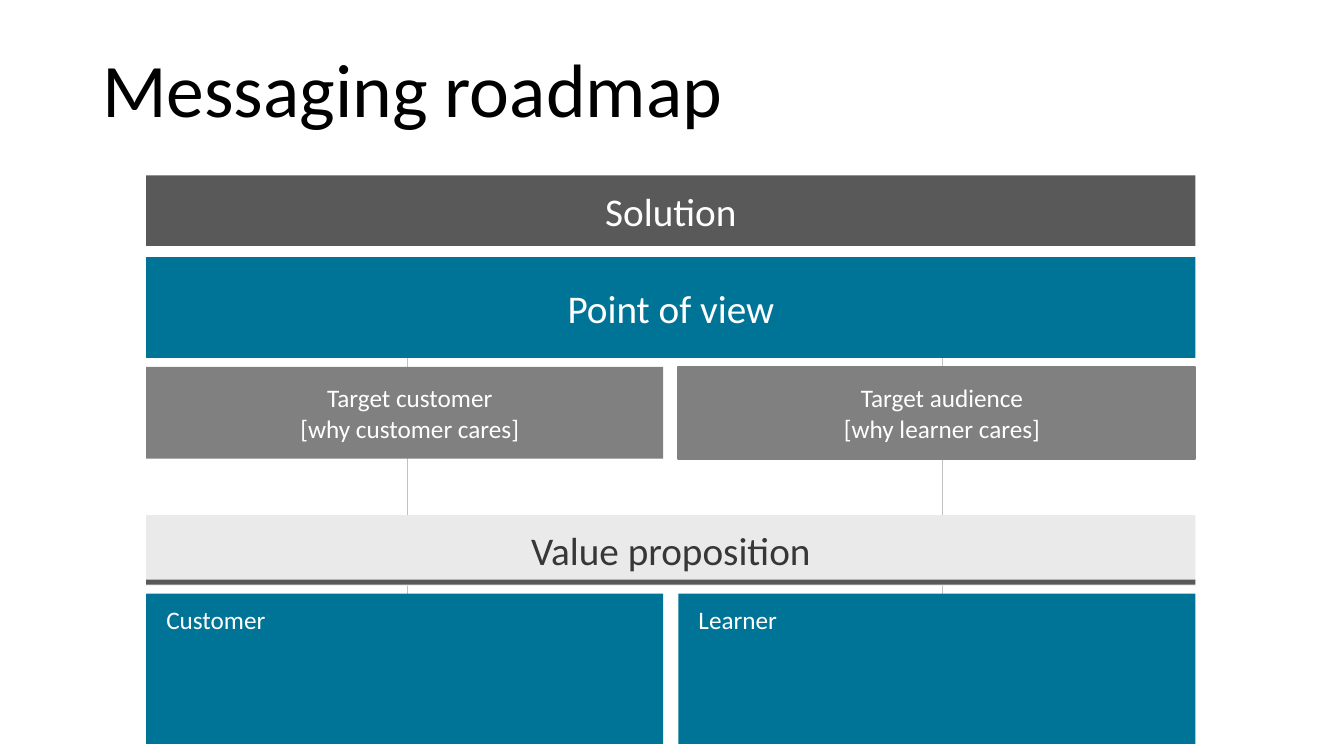
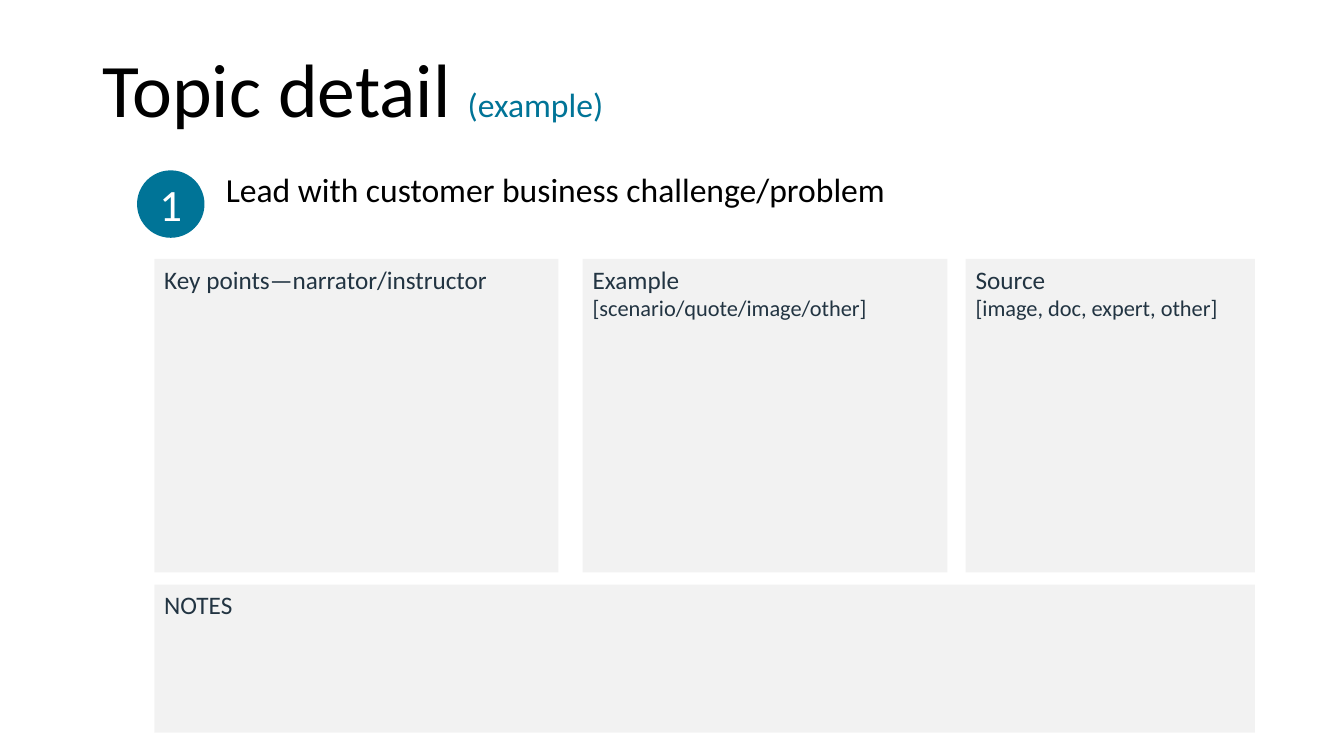
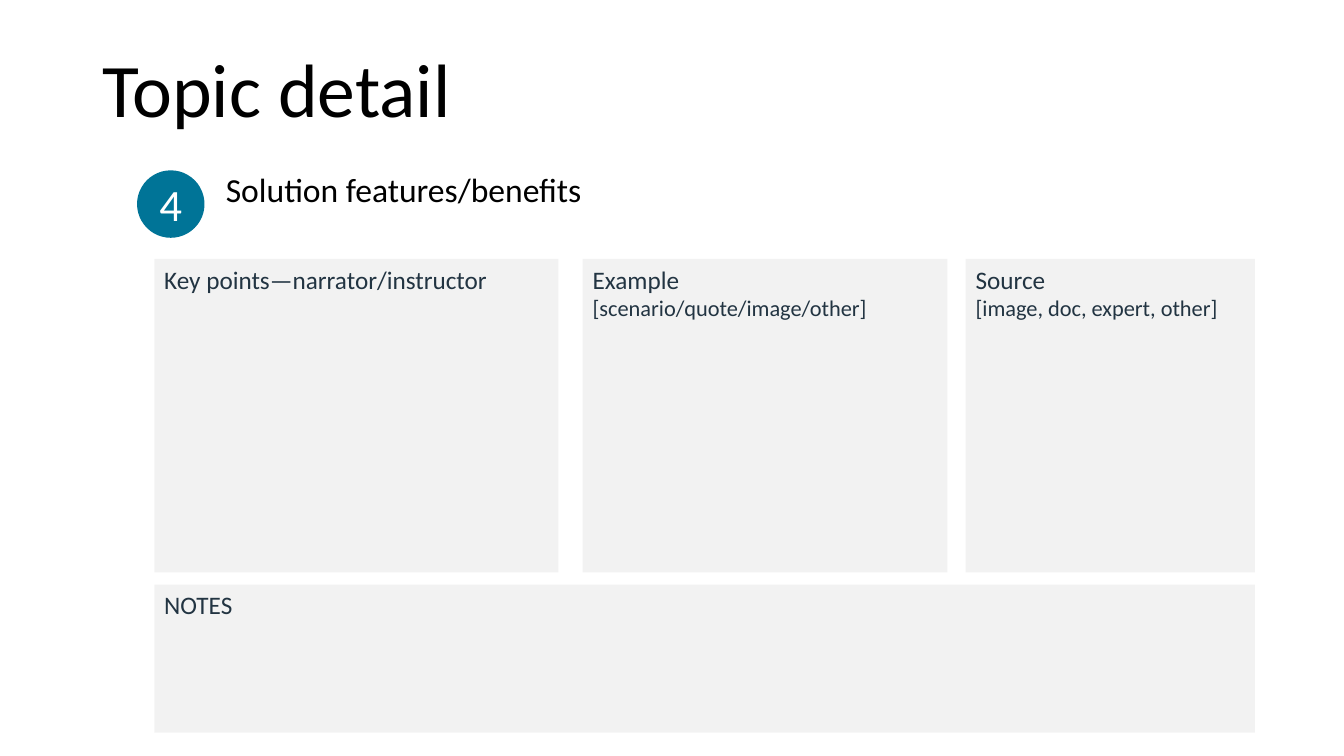
from lxml import etree
from pptx import Presentation
from pptx.dml.color import RGBColor
from pptx.enum import shapes, text
from pptx.oxml import ns
from pptx.util import Pt

FONT = "Calibri"
COLORS = {
    "black": "000000", "white": "FFFFFF", "teal": "007497", "charcoal": "595959",
    "gray": "808080", "pale": "EAEAEA", "rule": "C1C1C1", "ink": "373738",
    "navy": "223442",
}
RECT, OVAL = shapes.MSO_SHAPE.RECTANGLE, shapes.MSO_SHAPE.OVAL
CENTER, LEFT = text.PP_ALIGN.CENTER, text.PP_ALIGN.LEFT
MIDDLE, TOP = text.MSO_ANCHOR.MIDDLE, text.MSO_ANCHOR.TOP

# Roadmap grid: full-width bands and two equal columns
ROAD_X, ROAD_W, ROAD_GAP = 104.4, 749.5, 10.8
HALF_W = (ROAD_W - ROAD_GAP) / 2
RIGHT_X = ROAD_X + HALF_W + ROAD_GAP
ROAD_INSETS = (14.4, 7.2, 7.2, 7.2)

# Topic panels
PANEL_Y, PANEL_H = 185, 224
PANELS = [
    (110.2, 288.7, "Key points—narrator/instructor", None),
    (416.2, 260.6, "Example", "[scenario/quote/image/other]"),
    (689.8, 206.6, "Source", "[image, doc, expert, other]"),
]
PANEL_LEFT = PANELS[0][0]
PANEL_RIGHT = PANELS[-1][0] + PANELS[-1][1]


def color(name):
    return RGBColor.from_string(COLORS[name])


def write(sp, lines, align=LEFT, anchor=TOP, insets=(7.2, 3.6, 7.2, 3.6), spacing=None):
    """Fill one paragraph; each line is a list of (text, size, colour) runs."""
    tf = sp.text_frame
    tf.word_wrap = True
    tf.vertical_anchor = anchor
    tf.margin_left, tf.margin_top, tf.margin_right, tf.margin_bottom = map(Pt, insets)
    p = tf.paragraphs[0]
    p.alignment = align
    if spacing:
        p.line_spacing = spacing
    for i, runs in enumerate(lines):
        if i:
            p.add_line_break()
        for words, size, name in runs:
            r = p.add_run()
            r.text = words
            r.font.name = FONT
            r.font.size = Pt(size)
            r.font.color.rgb = color(name)


def add_text(slide, x, y, w, h, runs, **style):
    sp = slide.shapes.add_textbox(Pt(x), Pt(y), Pt(w), Pt(h))
    write(sp, [runs], spacing=0.9, **style)


def add_block(slide, x, y, w, h, fill, kind=RECT, opacity=None):
    sp = slide.shapes.add_shape(kind, Pt(x), Pt(y), Pt(w), Pt(h))
    sp.shadow.inherit = False
    sp.line.fill.background()
    sp.fill.solid()
    sp.fill.fore_color.rgb = color(fill)
    if opacity:
        rgb = sp.fill._xPr.find(".//" + ns.qn("a:srgbClr"))
        etree.SubElement(rgb, ns.qn("a:alpha"), val=str(opacity * 1000))
    return sp


def add_band(slide, y, h, label, fill, ink="white"):
    sp = add_block(slide, ROAD_X, y, ROAD_W, h, fill)
    write(sp, [[(label, 28, ink)]], CENTER, MIDDLE)


def add_column_line(slide, x, top, bottom):
    line = slide.shapes.add_connector(
        shapes.MSO_CONNECTOR.STRAIGHT, Pt(x), Pt(top), Pt(x), Pt(bottom))
    line.line.color.rgb = color("rule")
    line.line.width = Pt(1)
    etree.SubElement(line._element.spPr, ns.qn("a:effectLst"))


def add_half(slide, x, y, h, fill, lines, align=LEFT, anchor=TOP):
    sp = add_block(slide, x, y, HALF_W, h, fill)
    write(sp, [[(line, 18, "white")] for line in lines], align, anchor, ROAD_INSETS)
    return sp


def add_panel(slide, x, y, w, h, heading, hint=None):
    sp = add_block(slide, x, y, w, h, "black", opacity=5)
    lines = [[(heading, 18, "navy")]]
    if hint:
        lines.append([(hint, 16, "navy")])
    write(sp, lines)


def add_titled_slide(prs, title, suffix=None):
    slide = prs.slides.add_slide(prs.slide_layouts[6])
    runs = [(title, 54, "black")]
    if suffix:
        runs = [(title + " ", 54, "black"), (suffix, 24, "teal")]
    add_text(slide, 66, 14.4, 828, 104.4, runs, anchor=MIDDLE)
    return slide


def add_roadmap(prs):
    slide = add_titled_slide(prs, "Messaging roadmap")
    for x in (673.2, 290.9):
        add_column_line(slide, x, 244, 460)
    for x, label in ((ROAD_X, "Customer"), (RIGHT_X, "Learner")):
        add_half(slide, x, 424.1, 107.3, "teal", [label])
    add_band(slide, 367.9, 50.4, "Value proposition", "pale", "ink")
    add_block(slide, ROAD_X, 414, ROAD_W, 3.6, "charcoal")
    add_band(slide, 125.3, 50.4, "Solution", "charcoal")
    add_band(slide, 183.6, 72, "Point of view", "teal")
    targets = [
        (ROAD_X, ["Target customer", "[why customer cares]"]),
        (RIGHT_X, ["Target audience", "[why learner cares]"]),
    ]
    for x, lines in targets:
        target = add_half(slide, x, 262.1, 65.5, "gray", lines, CENTER, MIDDLE)
    target.line.color.rgb = color("gray")
    target.line.width = Pt(1.5)


def add_topic(prs, number, topic, suffix=None):
    slide = add_titled_slide(prs, "Topic detail", suffix)
    flush = (0, 0, 0, 0)
    add_text(slide, 161.3, 123.8, 547.2, 52.6, [(topic, 24, "black")], insets=flush)
    badge = add_block(slide, 97.9, 121.7, 48.2, 48.2, "teal", OVAL)
    write(badge, [[(number, 32, "white")]], CENTER, MIDDLE, flush)
    for x, w, heading, hint in PANELS:
        add_panel(slide, x, PANEL_Y, w, PANEL_H, heading, hint)
    add_panel(slide, PANEL_LEFT, 417.6, PANEL_RIGHT - PANEL_LEFT, 105.8, "NOTES")


def main():
    prs = Presentation()
    prs.slide_width, prs.slide_height = Pt(960), Pt(540)
    add_roadmap(prs)
    add_topic(prs, "1", "Lead with customer business challenge/problem", "(example)")
    add_topic(prs, "4", "Solution features/benefits")
    prs.save("out.pptx")


if __name__ == "__main__":
    main()
